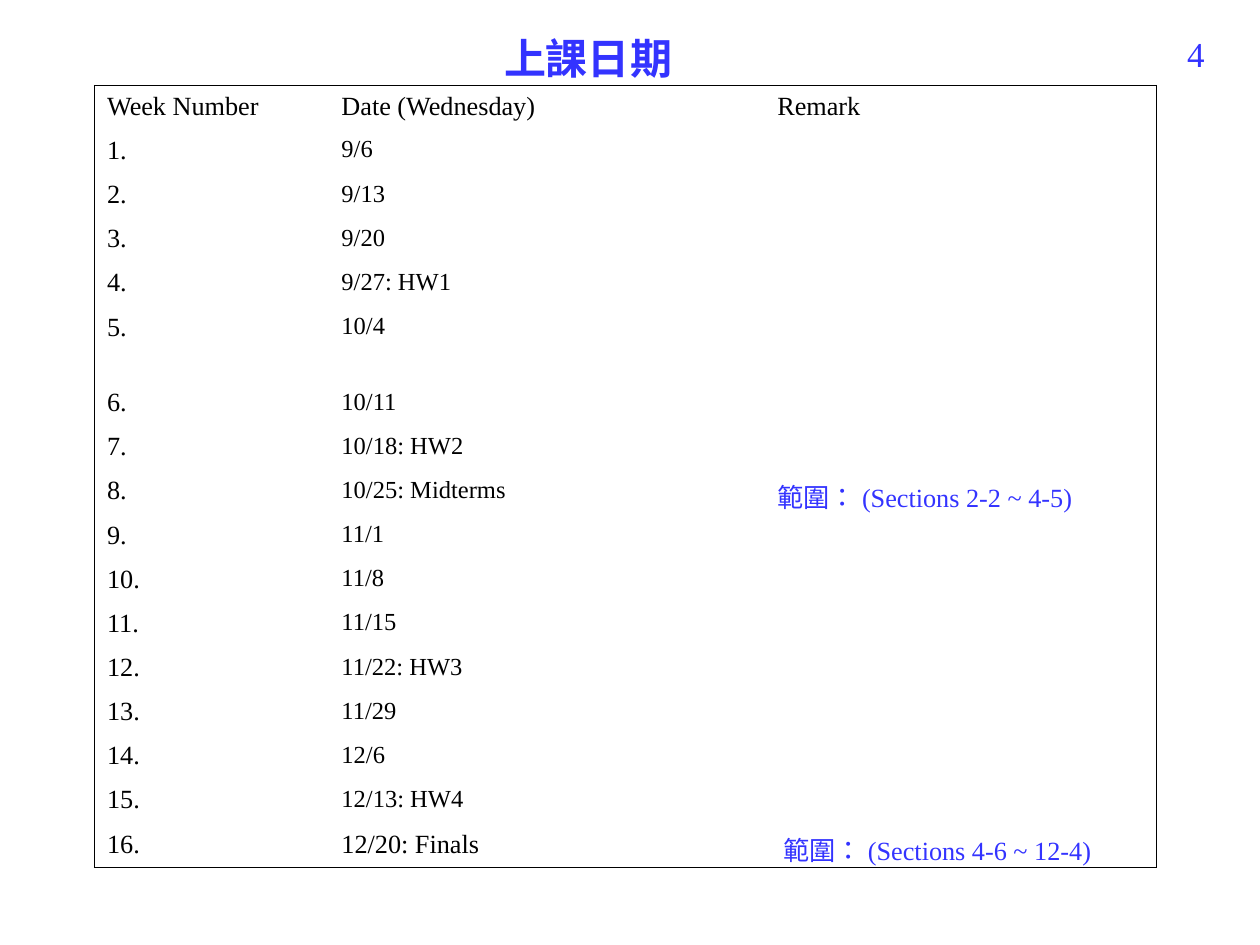
from lxml import etree
from pptx import Presentation
from pptx.dml.color import RGBColor
from pptx.enum import lang, text
from pptx.oxml import ns
from pptx.util import Inches, Pt

COLORS = {"accent": "3333FF", "text": "000000"}
BODY_FONT = "Times New Roman"
HEADINGS = ["Week Number", "Date (Wednesday)", "Remark"]
DATES = [
    "9/6", "9/13", "9/20", "9/27: HW1", "10/4", "10/11", "10/18: HW2",
    "10/25: Midterms", "11/1", "11/8", "11/15", "11/22: HW3", "11/29",
    "12/6", "12/13: HW4", "12/20: Finals",
]
REMARKS = {8: "範圍： (Sections 2-2 ~ 4-5)", 16: "\u00a0範圍： (Sections 4-6 ~ 12-4)"}
COLUMN_WIDTHS = [1.86, 3.46, 3.11]
ROW_HEIGHT = 0.35
TALL_ROW, TALL_HEIGHT = 5, 0.6


def style_font(font, size, color, name=BODY_FONT, bold=False):
    font.name = name
    font.size = Pt(size)
    font.bold = bold
    font.color.rgb = RGBColor.from_string(COLORS[color])


def set_chinese(paragraph):
    for run in paragraph.runs:
        run.font.language_id = lang.MSO_LANGUAGE_ID.TRADITIONAL_CHINESE


def set_borders(cell, visible_sides):
    properties = cell._tc.get_or_add_tcPr()
    for position, side in enumerate("LRTB"):
        line = etree.Element(ns.qn(f"a:ln{side}"), w=str(Pt(1)))
        if side in visible_sides:
            fill = etree.SubElement(line, ns.qn("a:solidFill"))
            etree.SubElement(fill, ns.qn("a:srgbClr"), val=COLORS["text"])
        else:
            etree.SubElement(line, ns.qn("a:noFill"))
        properties.insert(position, line)


def fill_cell(cell, content, size, color):
    cell.fill.background()
    paragraph = cell.text_frame.paragraphs[0]
    style_font(paragraph.font, size, color)
    if content:
        paragraph.text = content
    else:
        etree.SubElement(paragraph._p, ns.qn("a:endParaRPr"), sz=str(size * 100))
    if content in REMARKS.values():
        set_chinese(paragraph)


def add_title(slide, content):
    title = slide.shapes.title
    title.left, title.top = Inches(3.9), Inches(0.21)
    title.width, title.height = Inches(1.53), Inches(0.5)
    frame = title.text_frame
    frame.text = content
    frame.word_wrap = False
    frame.margin_right = 0
    frame.auto_size = text.MSO_AUTO_SIZE.SHAPE_TO_FIT_TEXT
    frame.vertical_anchor = text.MSO_ANCHOR.MIDDLE
    paragraph = frame.paragraphs[0]
    paragraph.alignment = text.PP_ALIGN.LEFT
    style_font(paragraph.font, 24, "accent", "Arial", True)
    set_chinese(paragraph)


def add_page_number(slide, number):
    box = slide.shapes.add_textbox(Inches(8.7), Inches(0.21), Inches(0.96), Inches(0.52))
    box.text_frame.word_wrap = True
    paragraph = box.text_frame.paragraphs[0]
    paragraph.text = number
    paragraph.alignment = text.PP_ALIGN.RIGHT
    style_font(paragraph.font, 20, "accent")


def add_schedule(slide):
    rows = [HEADINGS] + [
        [f"{week}.", date, REMARKS.get(week, "")] for week, date in enumerate(DATES, 1)
    ]
    last_row, last_column = len(rows) - 1, len(HEADINGS) - 1
    heights = [TALL_HEIGHT if row == TALL_ROW else ROW_HEIGHT for row in range(len(rows))]
    table = slide.shapes.add_table(
        len(rows), len(HEADINGS), Inches(0.75), Inches(0.68),
        Inches(sum(COLUMN_WIDTHS)), Inches(sum(heights)),
    ).table
    table.first_row = table.horz_banding = False
    for column, width in zip(table.columns, COLUMN_WIDTHS):
        column.width = Inches(width)
    for row, values in enumerate(rows):
        table.rows[row].height = Inches(heights[row])
        for column, content in enumerate(values):
            cell = table.cell(row, column)
            is_date = column == 1 and 0 < row < last_row
            is_remark = column == last_column and row > 0
            size = 14 if is_date or not content else 15
            fill_cell(cell, content, size, "accent" if is_remark else "text")
            edges = {"L": column == 0, "R": column == last_column,
                     "T": row == 0, "B": row == last_row}
            set_borders(cell, [side for side, outer in edges.items() if outer])


def main():
    presentation = Presentation()
    presentation.slide_width, presentation.slide_height = Inches(10), Inches(7.5)
    slide = presentation.slides.add_slide(presentation.slide_layouts[5])
    add_page_number(slide, "4")
    add_title(slide, "上課日期")
    add_schedule(slide)
    presentation.save("out.pptx")


if __name__ == "__main__":
    main()
